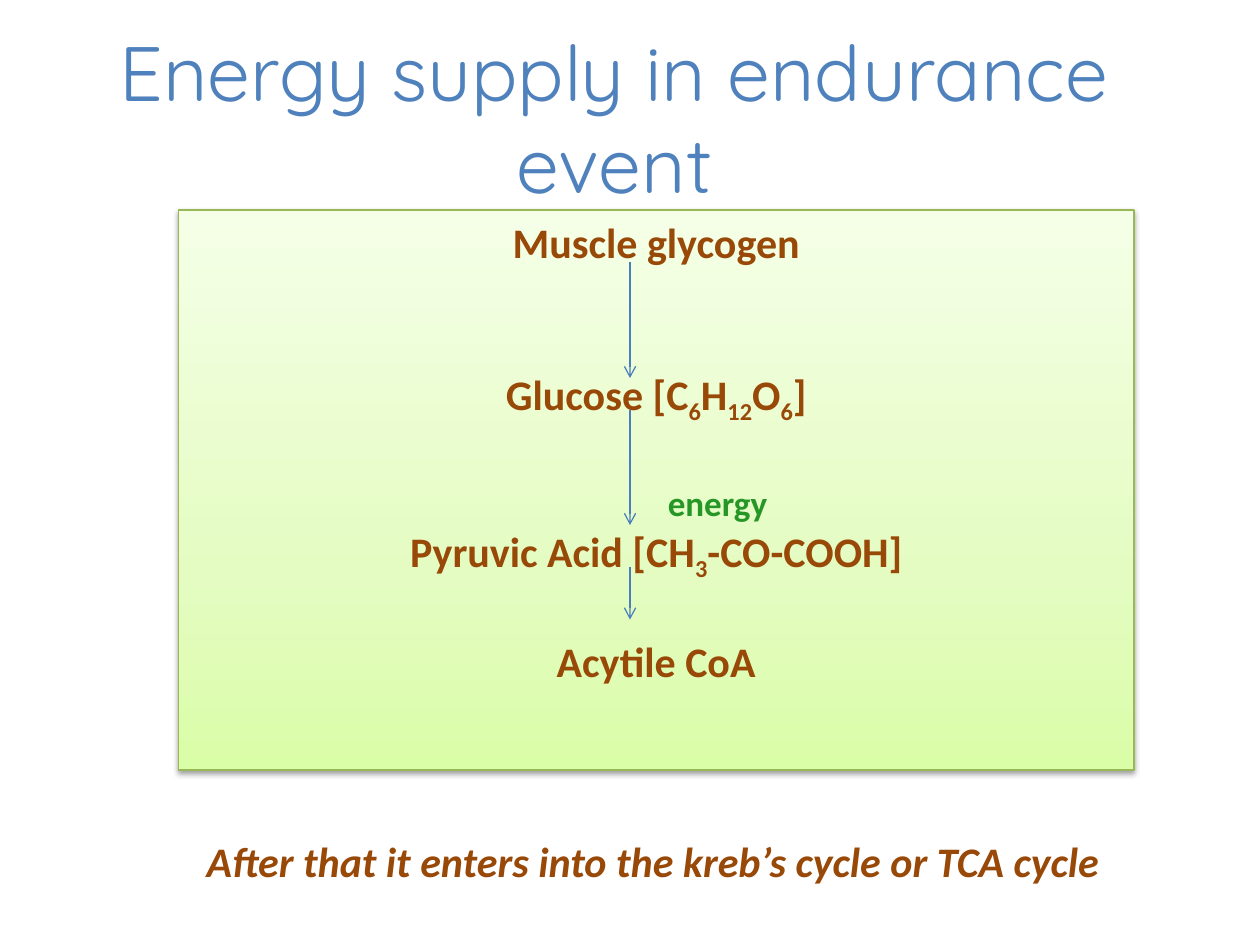
"""Build a slide on the energy supply chain in an endurance event."""
from lxml import etree
from pptx import Presentation
from pptx.dml.color import RGBColor
from pptx.enum.shapes import MSO_CONNECTOR, MSO_SHAPE
from pptx.enum.text import MSO_ANCHOR, PP_ALIGN
from pptx.oxml import parse_xml
from pptx.oxml.ns import qn
from pptx.util import Pt

CENTER, LEFT = PP_ALIGN.CENTER, PP_ALIGN.LEFT
TOP, MIDDLE = MSO_ANCHOR.TOP, MSO_ANCHOR.MIDDLE
RECTANGLE, STRAIGHT = MSO_SHAPE.RECTANGLE, MSO_CONNECTOR.STRAIGHT
DRAWING = "http://schemas.openxmlformats.org/drawingml/2006/main"

THEME = {
    "title": {"font": "Quicksand", "size": 44, "color": "4F81BD"},
    "step": {"font": "Calibri", "size": 24, "color": "984807", "bold": True},
    "energy": {"font": "Calibri", "size": 20, "color": "269626", "bold": True},
    "closing": {"font": "Calibri", "size": 24, "color": "984807", "bold": True, "italic": True},
    "panel_stops": [(0, "DAFDA7"), (35, "E4FCC2"), (100, "F5FFE7")],
    "panel_line": "98B955",
    "arrow": "4B7EBC",
    "line_width": 0.75,
}

SLIDE_SIZE = (720, 540)
TITLE = "Energy supply in endurance event"
TITLE_BOX = (0, 21.6, 702, 90)
CLOSING = "After that it enters into the kreb’s cycle or TCA cycle"
CLOSING_BOX = (84, 474, 582, 36)
CLOSING_INDENT = 27
PANEL_BOX = (102, 120, 546, 320)

# Each step: style, text pieces with every second one a subscript, space before, indent.
STEPS = [
    ("step", ["Muscle glycogen"], 0, 0),
    ("step", ["Glucose [C", "6", "H", "12", "O", "6", "]"], 58, 0),
    ("energy", ["energy"], 32, 70),
    ("step", ["Pyruvic Acid [CH", "3", "-CO-COOH]"], 1, 0),
    ("step", ["Acytile CoA"], 30, 0),
]
ARROW_X = 360
ARROW_SPANS = [(150, 216), (234, 300), (324, 354)]


def style_span(span, style):
    font = span.font
    font.name, font.size = style["font"], Pt(style["size"])
    font.color.rgb = RGBColor.from_string(style["color"])
    font.bold, font.italic = style.get("bold", False), style.get("italic", False)


def write_para(para, pieces, style, align, space=0, indent=0):
    para.alignment, para.space_before = align, Pt(space)
    if indent:
        para._p.get_or_add_pPr().set("marL", str(Pt(indent)))
    for index, piece in enumerate(pieces):
        span = para.add_run()
        span.text = piece
        style_span(span, THEME[style])
        if index % 2:
            span.font._element.set("baseline", "-25000")


def add_text(page, place, text, style, align, anchor, indent=0):
    frame = page.shapes.add_textbox(*map(Pt, place)).text_frame
    frame.word_wrap, frame.vertical_anchor = True, anchor
    write_para(frame.paragraphs[0], [text], style, align, indent=indent)


def add_panel(page):
    panel = page.shapes.add_shape(RECTANGLE, *map(Pt, PANEL_BOX))
    panel.line.color.rgb = RGBColor.from_string(THEME["panel_line"])
    panel.line.width = Pt(THEME["line_width"])
    stops = "".join(
        f'<a:gs pos="{position * 1000}"><a:srgbClr val="{color}"/></a:gs>'
        for position, color in THEME["panel_stops"]
    )
    properties = panel._element.spPr
    properties.find(qn("a:prstGeom")).addnext(parse_xml(
        f'<a:gradFill xmlns:a="{DRAWING}" rotWithShape="1"><a:gsLst>{stops}</a:gsLst>'
        '<a:lin ang="16200000" scaled="0"/></a:gradFill>'
    ))
    properties.append(parse_xml(
        f'<a:effectLst xmlns:a="{DRAWING}"><a:outerShdw blurRad="{Pt(3.1)}" '
        f'dist="{Pt(1.6)}" dir="5400000" rotWithShape="0"><a:srgbClr val="000000">'
        '<a:alpha val="38000"/></a:srgbClr></a:outerShdw></a:effectLst>'
    ))
    frame = panel.text_frame
    frame.word_wrap, frame.vertical_anchor = True, TOP
    for index, (style, pieces, space, indent) in enumerate(STEPS):
        para = frame.add_paragraph() if index else frame.paragraphs[0]
        write_para(para, pieces, style, CENTER, space, indent)


def add_arrow(page, start, end):
    arrow = page.shapes.add_connector(STRAIGHT, *map(Pt, (ARROW_X, start, ARROW_X, end)))
    arrow.line.color.rgb = RGBColor.from_string(THEME["arrow"])
    arrow.line.width = Pt(THEME["line_width"])
    etree.SubElement(arrow.line._get_or_add_ln(), qn("a:tailEnd"), type="arrow")
    etree.SubElement(arrow._element.spPr, qn("a:effectLst"))


def main():
    deck = Presentation()
    deck.slide_width, deck.slide_height = map(Pt, SLIDE_SIZE)
    page = deck.slides.add_slide(deck.slide_layouts[6])
    add_text(page, TITLE_BOX, TITLE, "title", CENTER, MIDDLE)
    add_panel(page)
    for start, end in ARROW_SPANS:
        add_arrow(page, start, end)
    add_text(page, CLOSING_BOX, CLOSING, "closing", LEFT, TOP, CLOSING_INDENT)
    deck.save("out.pptx")


if __name__ == "__main__":
    main()
